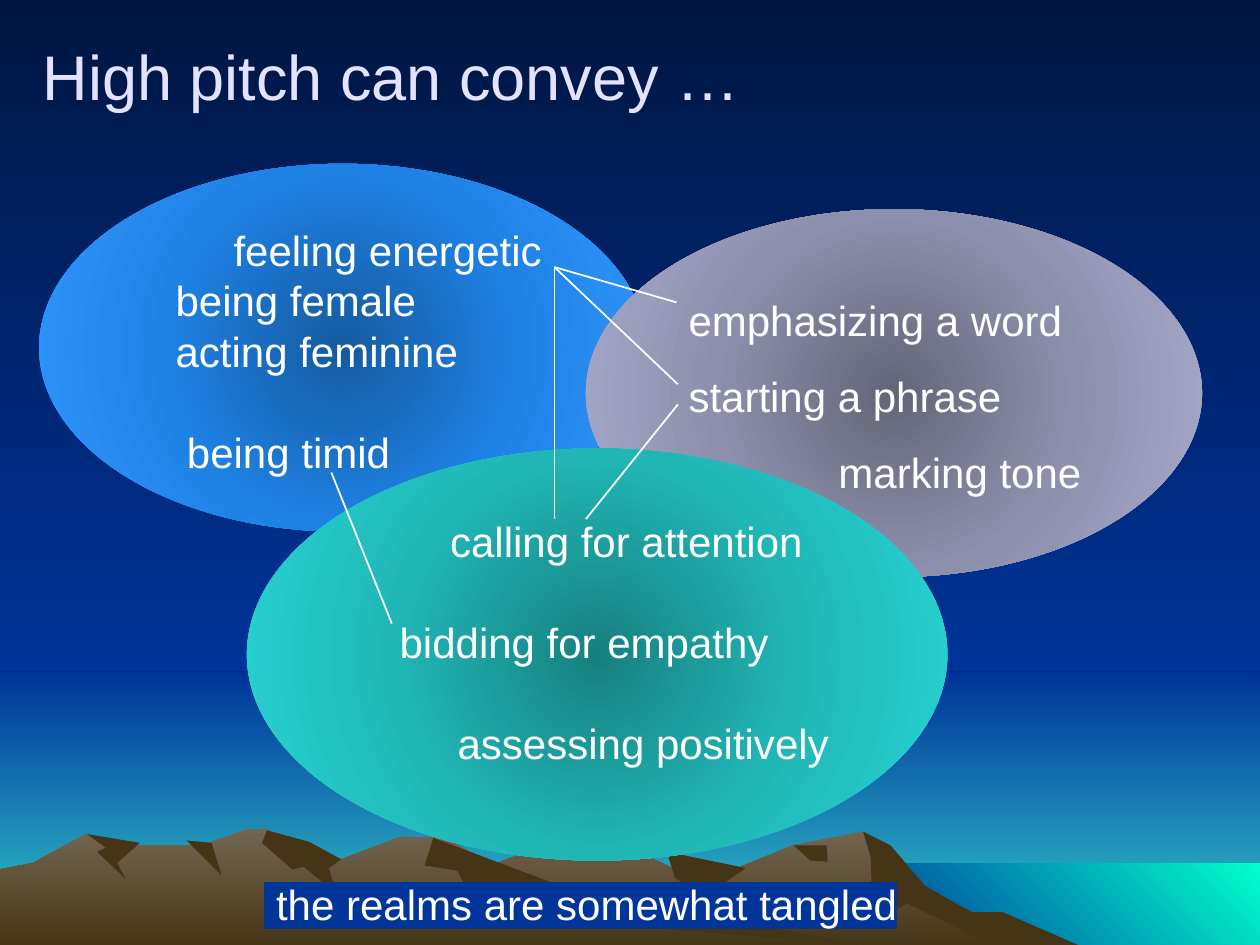
import pptx
import pptx.util
import pptx.dml.color
import pptx.enum.shapes
import pptx.enum.text
from lxml import etree
from pptx.oxml.ns import qn

FONT = "Arial"
COLORS = {
    "night": "001642", "blue": "003399", "horizon": "33CCCC", "sea": "00FFCC",
    "ridge": "736650", "rock": "463416", "title": "E3E3FF", "text": "FFFFFF",
    "mark": "01359A",
    "feel in": "155BA0", "feel mid": "1E81E4", "feel out": "3399FF",
    "lang in": "636579", "lang mid": "8D90AC", "lang out": "A8ABCC",
    "social in": "178080", "social mid": "21B6B6", "social out": "28D7D7",
}

# All positions are in hundredths of an inch
TITLE = "High pitch can convey …"
CAPTION = " the realms are somewhat tangled"

# name, box, line pitch in points, lines as (text, indent, blank lines before)
REALMS = [
    ("feel", (31, 130, 482, 292), 28.9,
     [("feeling energetic", 74, 0), ("being female", 28, 0),
      ("acting feminine", 28, 0), ("being timid", 37, 1)]),
    ("lang", (465, 166, 489, 292), 43.4,
     [("emphasizing a word", 0, 0), ("starting a phrase", 0, 0), ("marking tone", 119, 0)]),
    ("social", (196, 356, 556, 327), 28.9,
     [("calling for attention", 70, 0), ("bidding for empathy", 30, 1),
      ("assessing positively", 76, 1)]),
]

ENERGETIC = (440, 212)
LINKS = [
    ((263, 375), (311, 495)),
    (ENERGETIC, (537, 240)),
    (ENERGETIC, (538, 305)),
    (ENERGETIC, (440, 412)),
    ((538, 321), (465, 412)),
]

# box, colours from start to end, angle
BANDS = [
    ((0, 533, 1000, 217), ("blue", "horizon"), 90),
    ((0, 0, 1000, 533), ("night", "blue"), 90),
    ((683, 685, 317, 67), ("blue", "sea"), 315),
]

# Each mountain is its body followed by the dark faces on it
MOUNTAINS = [
    [
        [(821, 751), (723, 698), (685, 660), (629, 671), (566, 697), (536, 690),
         (468, 658), (394, 685), (258, 751)],
        [(685, 660), (691, 680), (693, 733), (720, 717), (792, 752), (858, 751),
         (796, 724), (771, 724), (734, 703), (707, 671)],
        [(529, 676), (536, 697), (580, 723), (576, 700), (592, 689)],
        [(630, 671), (643, 683), (657, 684), (656, 671)],
    ],
    [
        [(690, 751), (432, 712), (354, 665), (318, 664), (271, 682), (236, 681),
         (212, 658), (196, 658), (160, 671), (94, 671), (68, 662), (26, 685),
         (0, 690), (0, 751)],
        [(212, 659), (208, 669), (232, 690), (241, 688), (267, 709), (261, 689),
         (271, 682), (245, 668)],
        [(344, 665), (337, 687), (363, 691), (374, 712), (407, 727), (690, 751),
         (455, 707)],
        [(148, 667), (176, 695), (168, 669)],
        [(69, 662), (84, 673), (77, 676), (100, 698), (93, 685), (111, 669)],
    ],
]


def u(v):
    return pptx.util.Cm(v * 0.0254)


def rgb(name):
    return pptx.dml.color.RGBColor.from_string(COLORS[name])


def gradient(fill, owner, names, angle=None):
    """Evenly spaced stops: linear with an angle, circular without."""
    fill.gradient()
    grad = next(owner.iter(qn("a:gradFill")))
    for child in list(grad):
        grad.remove(child)
    stops = etree.SubElement(grad, qn("a:gsLst"))
    for i, name in enumerate(names):
        stop = etree.SubElement(stops, qn("a:gs"), pos=str(100000 * i // (len(names) - 1)))
        etree.SubElement(stop, qn("a:srgbClr"), val=COLORS[name])
    if angle is None:
        circle = etree.SubElement(grad, qn("a:path"), path="circle")
        etree.SubElement(circle, qn("a:fillToRect"), dict.fromkeys("ltrb", "50000"))
    else:
        etree.SubElement(grad, qn("a:lin"), ang=str(angle * 60000), scaled="0")


def bare(sp):
    sp.shadow.inherit = False
    sp.line.fill.background()
    return sp


def add_preset(s, kind, box):
    return bare(s.shapes.add_shape(kind, *map(u, box)))


def style(p, size, color):
    for r in p.runs:
        r.font.name, r.font.size = FONT, pptx.util.Pt(size)
        r.font.color.rgb = rgb(color)


def add_text(s, box, text, size, color):
    tf = s.shapes.add_textbox(*map(u, box)).text_frame
    tf.word_wrap = True
    tf.text = text
    style(tf.paragraphs[0], size, color)
    return tf


prs = pptx.Presentation()
prs.slide_width, prs.slide_height = u(1000), u(750)
s = prs.slides.add_slide(prs.slide_layouts[6])
SHAPE = pptx.enum.shapes.MSO_SHAPE
ANCHOR = pptx.enum.text.MSO_ANCHOR
ALIGN = pptx.enum.text.PP_ALIGN

# Sky, horizon and sea
gradient(s.background.fill, s.element, ("night", "blue"), 90)
for box, names, angle in BANDS:
    sp = add_preset(s, SHAPE.RECTANGLE, box)
    gradient(sp.fill, sp.element, names, angle)

# Mountains
for mountain in MOUNTAINS:
    for i, points in enumerate(mountain):
        builder = s.shapes.build_freeform(*points[0], scale=u(1))
        builder.add_line_segments(points[1:], close=True)
        sp = bare(builder.convert_to_shape())
        if i == 0:
            gradient(sp.fill, sp.element, ("ridge", "rock"), 90)
        else:
            sp.fill.solid()
            sp.fill.fore_color.rgb = rgb("rock")

# Title
tf = add_text(s, (24, 26, 836, 67), TITLE, 36, "title")
tf.vertical_anchor = ANCHOR.MIDDLE

# Realms
for name, box, pitch, lines in REALMS:
    sp = add_preset(s, SHAPE.OVAL, box)
    gradient(sp.fill, sp.element, [f"{name} {part}" for part in ("in", "mid", "out")])
    tf = sp.text_frame
    tf.word_wrap, tf.vertical_anchor, tf.margin_right = True, ANCHOR.TOP, 0
    tf.text = "\n".join(line[0] for line in lines)
    for p, (_, indent, blanks) in zip(tf.paragraphs, lines):
        p.alignment = ALIGN.LEFT
        p.line_spacing = pptx.util.Pt(pitch)
        p.space_before = pptx.util.Pt(pitch * blanks)
        p._p.get_or_add_pPr().set("marL", str(u(indent)))
        style(p, 24, "text")

# Caption on a highlight
p = add_text(s, (191, 692, 540, 50), CAPTION, 24, "text").paragraphs[0]
p.alignment = ALIGN.CENTER
highlight = etree.Element(qn("a:highlight"))
etree.SubElement(highlight, qn("a:srgbClr"), val=COLORS["mark"])
p.runs[0]._r.rPr.find(qn("a:solidFill")).addnext(highlight)

# Links between the realms
for start, end in LINKS:
    line = s.shapes.add_connector(pptx.enum.shapes.MSO_CONNECTOR.STRAIGHT,
                                  *map(u, start + end))
    line.line.color.rgb = rgb("text")
    line.line.width = pptx.util.Pt(1)
    etree.SubElement(line._element.spPr, qn("a:effectLst"))

prs.save("out.pptx")
